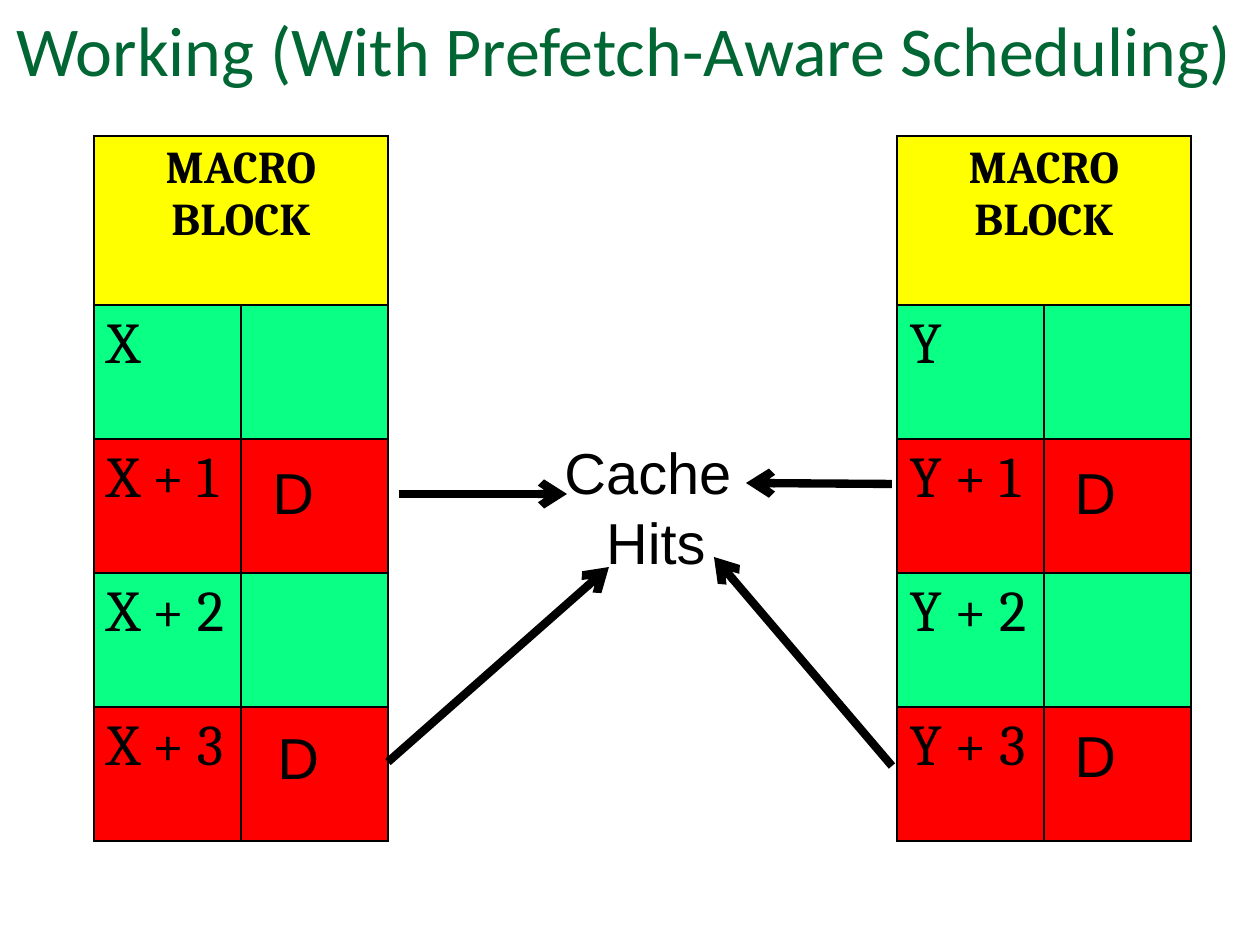
import pptx
import pptx.util
import pptx.dml.color
import pptx.enum.shapes
import pptx.enum.text
import pptx.oxml
import pptx.oxml.ns
from dataclasses import dataclass

# Content
TITLE = "Working (With Prefetch-Aware Scheduling)"
HEAD = ["MACRO", "BLOCK"]
HITS = ["Cache ", "Hits"]
BLOCKS = [("X", 94), ("Y", 897)]  # base address, left edge
STEPS = ["", " + 1", " + 2", " + 3"]  # odd steps are prefetched
MARKS = [(265, 685), (260, 420), (1062, 683), (1062, 420)]
ARROWS = [
    ((399, 494), (567, 494)),
    ((388, 762), (609, 567)),
    ((892, 484), (746, 483)),
    ((892, 766), (714, 557)),
]
TOP, COL, HEAD_H, ROW_H = 136, 147, 169, 134


@dataclass
class Theme:
    ink: str = "000000"
    title: str = "006633"
    head: str = "FFFF00"
    miss: str = "0AFF85"
    hit: str = "FF0000"
    big: int = 40
    mid: int = 26
    text: int = 33
    line: float = 4.75
    edge: int = 1


T = Theme()
ALIGN = pptx.enum.text.PP_ALIGN
ANCHOR = pptx.enum.text.MSO_ANCHOR


def px(n):
    return pptx.util.Emu(round(n * 914400 / 126))


def rgb(code):
    return pptx.dml.color.RGBColor.from_string(code)


def write(frame, lines, size, face, color=T.ink, bold=False, align=ALIGN.LEFT):
    frame.text = "\n".join(lines)
    for para in frame.paragraphs:
        para.alignment = align
        para.font.size = pptx.util.Pt(size)
        para.font.name = face
        para.font.bold = bold
        para.font.color.rgb = rgb(color)


def paint(cell, color):
    """Fill a cell and draw its four borders."""
    cell.fill.solid()
    cell.fill.fore_color.rgb = rgb(color)
    props = cell._tc.get_or_add_tcPr()
    for spot, side in enumerate("LRTB"):
        props.insert(spot, pptx.oxml.parse_xml(
            f'<a:ln{side} {pptx.oxml.ns.nsdecls("a")} w="{pptx.util.Pt(T.edge)}">'
            f'<a:solidFill><a:srgbClr val="{T.ink}"/></a:solidFill></a:ln{side}>'))


def add_block(shapes, base, left):
    rows = len(STEPS) + 1
    height = HEAD_H + ROW_H * len(STEPS)
    table = shapes.add_table(rows, 2, px(left), px(TOP), px(2 * COL), px(height)).table
    table.first_row = table.horz_banding = False
    for col in table.columns:
        col.width = px(COL)
    for i, row in enumerate(table.rows):
        row.height = px(ROW_H if i else HEAD_H)
        color = T.head if i == 0 else T.miss if i % 2 else T.hit
        for cell in row.cells:
            paint(cell, color)
    table.cell(0, 0).merge(table.cell(0, 1))
    write(table.cell(0, 0).text_frame, HEAD, T.mid, "Cambria", bold=True, align=ALIGN.CENTER)
    for i, step in enumerate(STEPS, 1):
        write(table.cell(i, 0).text_frame, [base + step], T.text, "Cambria")


def add_label(shapes, box, lines, align, anchor):
    frame = shapes.add_textbox(*map(px, box)).text_frame
    frame.word_wrap = True
    frame.vertical_anchor = anchor
    write(frame, lines, T.text, "Arial", align=align)


def add_arrow(shapes, start, end):
    kind = pptx.enum.shapes.MSO_CONNECTOR.STRAIGHT
    arrow = shapes.add_connector(kind, *map(px, start + end))
    arrow.line.color.rgb = rgb(T.ink)
    arrow.line.width = pptx.util.Pt(T.line)
    space = pptx.oxml.ns.nsdecls("a")
    arrow.line._get_or_add_ln().append(
        pptx.oxml.parse_xml(f'<a:tailEnd {space} type="arrow"/>'))
    arrow._element.spPr.append(pptx.oxml.parse_xml(f"<a:effectLst {space}/>"))


def main():
    deck = pptx.Presentation()
    deck.slide_width, deck.slide_height = px(1260), px(945)
    slide = deck.slides.add_slide(deck.slide_layouts[5])

    # Title
    title = slide.shapes.title
    title.left, title.top, title.width, title.height = map(px, (4, 0, 1281, 105))
    title.text_frame.vertical_anchor = ANCHOR.TOP
    write(title.text_frame, [TITLE], T.big, "Calibri", T.title)

    # Macro blocks
    for base, left in BLOCKS:
        add_block(slide.shapes, base, left)

    # Cache hits with arrows and prefetch marks
    group = slide.shapes.add_group_shape().shapes
    add_label(group, (535, 431, 242, 152), HITS, ALIGN.CENTER, ANCHOR.TOP)
    for start, end in ARROWS:
        add_arrow(group, start, end)
    for left, top in MARKS:
        add_label(group, (left, top, COL, 142), ["D"], ALIGN.LEFT, ANCHOR.MIDDLE)

    deck.save("out.pptx")


if __name__ == "__main__":
    main()
